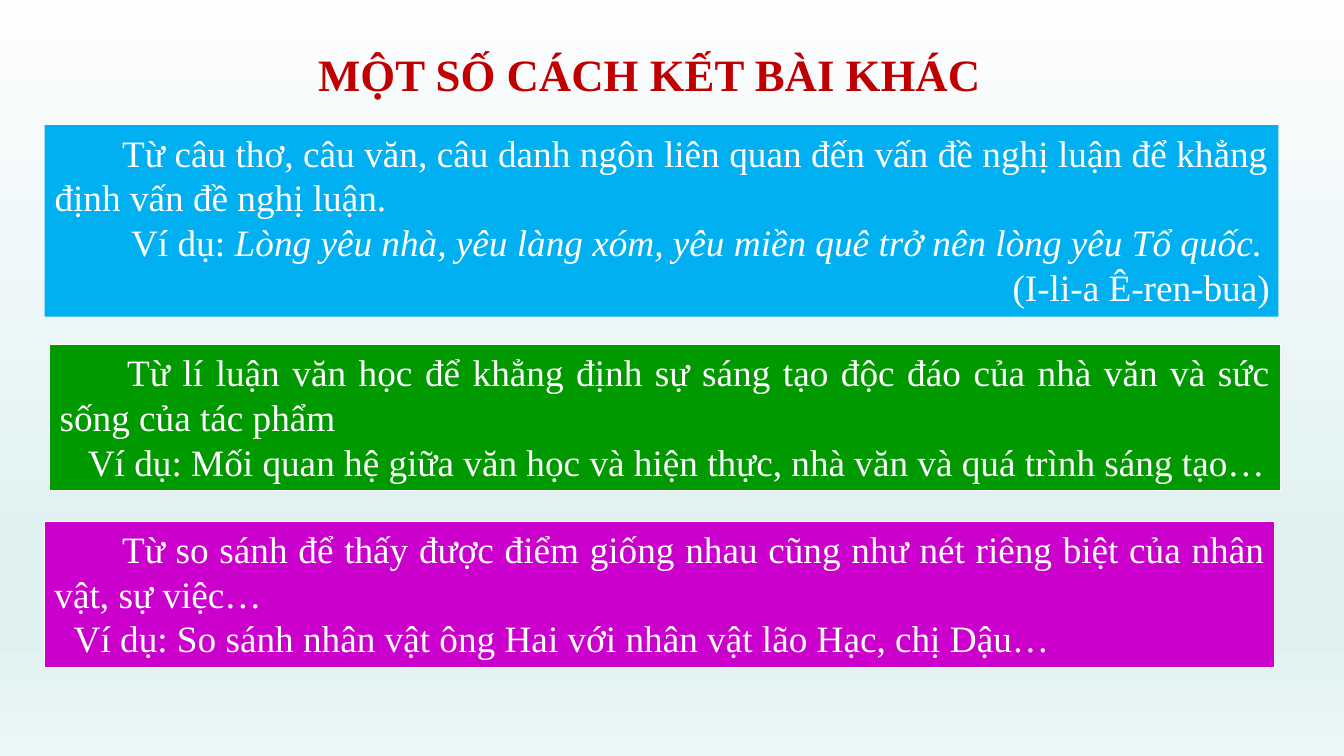
import pptx
import pptx.util
import pptx.dml.color
import pptx.enum.shapes
import pptx.enum.text
import pptx.oxml.ns
import lxml.etree
from dataclasses import dataclass

qn = pptx.oxml.ns.qn
Align = pptx.enum.text.PP_ALIGN


@dataclass(frozen=True)
class Theme:
    font: str = "Times New Roman"
    head: float = 32
    body: float = 26.6
    red: str = "C00000"
    white: str = "FFFFFF"
    blue: str = "00B0F0"
    green: str = "009900"
    pink: str = "CC00CC"
    back: tuple = ((0, "FCFDFE"), (74, "E0F1F2"), (83, "E0F1F2"), (100, "EBF6F7"))


@dataclass(frozen=True)
class Line:
    """A paragraph: its text, first-line indent in inches, and italic tail."""
    text: str
    indent: float = 0
    align: Align = Align.JUSTIFY
    tail: str = ""


THEME = Theme()
WIDE, HIGH = pptx.util.Inches(13.333), pptx.util.Inches(7.5)
FIRST = 0.67  # first-line indent, inches

# Boxes are left, top, width, height in percent of the slide.
TITLE = (11.65, 5.5, 73.35, 8.53)
CARDS = [
    ((3.32, 16.55, 91.8, 25.33), THEME.blue, False, [
        Line("Từ câu thơ, câu văn, câu danh ngôn liên quan đến vấn đề nghị luận "
             "để khẳng định vấn đề nghị luận.", FIRST),
        Line("Ví dụ: ", 0.76,
             tail="Lòng yêu nhà, yêu làng xóm, yêu miền quê trở nên lòng yêu Tổ quốc."),
        Line("(I-li-a Ê-ren-bua)", FIRST, Align.RIGHT)]),
    ((3.7, 45.6, 91.55, 19.33), THEME.green, True, [
        Line("Từ lí luận văn học để khẳng định sự sáng tạo độc đáo của nhà văn "
             "và sức sống của tác phẩm", FIRST),
        Line("Ví dụ: Mối quan hệ giữa văn học và hiện thực, nhà văn và quá trình "
             "sáng tạo…", 0.28, Align.LEFT)]),
    ((3.32, 68.95, 91.55, 19.33), THEME.pink, True, [
        Line("Từ so sánh để thấy được điểm giống nhau cũng như nét riêng biệt "
             "của nhân vật, sự việc…", FIRST),
        Line("Ví dụ: So sánh nhân vật ông Hai với nhân vật lão Hạc, chị Dậu…",
             0.19, Align.LEFT)]),
]


def rgb(code):
    return pptx.dml.color.RGBColor.from_string(code)


def place(box):
    """Turn percent shares into slide lengths."""
    return [round(side * share / 100) for side, share in zip((WIDE, HIGH) * 2, box)]


def style(run, size, color):
    run.font.name = THEME.font
    run.font.size = pptx.util.Pt(size)
    run.font.color.rgb = rgb(color)


def paint(slide):
    """Fill the background with the vertical gradient."""
    fill = slide.background.fill
    fill.gradient()
    fill.gradient_angle = 270
    stops = slide.element.find(".//" + qn("a:gsLst"))
    stops.clear()
    for share, color in THEME.back:
        stop = lxml.etree.SubElement(stops, qn("a:gs"), pos=str(share * 1000))
        lxml.etree.SubElement(stop, qn("a:srgbClr"), val=color)


def title(slide, box, text):
    frame = slide.shapes.add_textbox(*place(box)).text_frame
    frame.word_wrap = True
    para = frame.paragraphs[0]
    para.text = text
    para.alignment = Align.CENTER
    style(para.runs[0], THEME.head, THEME.red)
    para.runs[0].font.bold = True


def card(slide, box, color, edge, lines):
    shape = slide.shapes.add_shape(
        pptx.enum.shapes.MSO_SHAPE.RECTANGLE, *place(box))
    shape.shadow.inherit = False
    shape.fill.solid()
    shape.fill.fore_color.rgb = rgb(color)
    if edge:
        shape.line.color.rgb = rgb(THEME.white)
        shape.line.width = pptx.util.Pt(0.75)
    else:
        shape.line.fill.background()
    frame = shape.text_frame
    frame.word_wrap = True
    frame.margin_right = pptx.util.Inches(0.08)
    frame.vertical_anchor = pptx.enum.text.MSO_ANCHOR.TOP
    frame.text = "\n".join(line.text for line in lines)
    for para, line in zip(frame.paragraphs, lines):
        para.alignment = line.align
        props = para._p.get_or_add_pPr()
        props.set("marL", "0")
        props.set("indent", str(pptx.util.Inches(line.indent)))
        if line.tail:
            tail = para.add_run()
            tail.text = line.tail
            tail.font.italic = True
        for run in para.runs:
            style(run, THEME.body, THEME.white)


def main():
    deck = pptx.Presentation()
    deck.slide_width, deck.slide_height = WIDE, HIGH
    slide = deck.slides.add_slide(deck.slide_layouts[6])
    paint(slide)
    title(slide, TITLE, "MỘT SỐ CÁCH KẾT BÀI KHÁC")
    for part in CARDS:
        card(slide, *part)
    deck.save("out.pptx")


if __name__ == "__main__":
    main()
